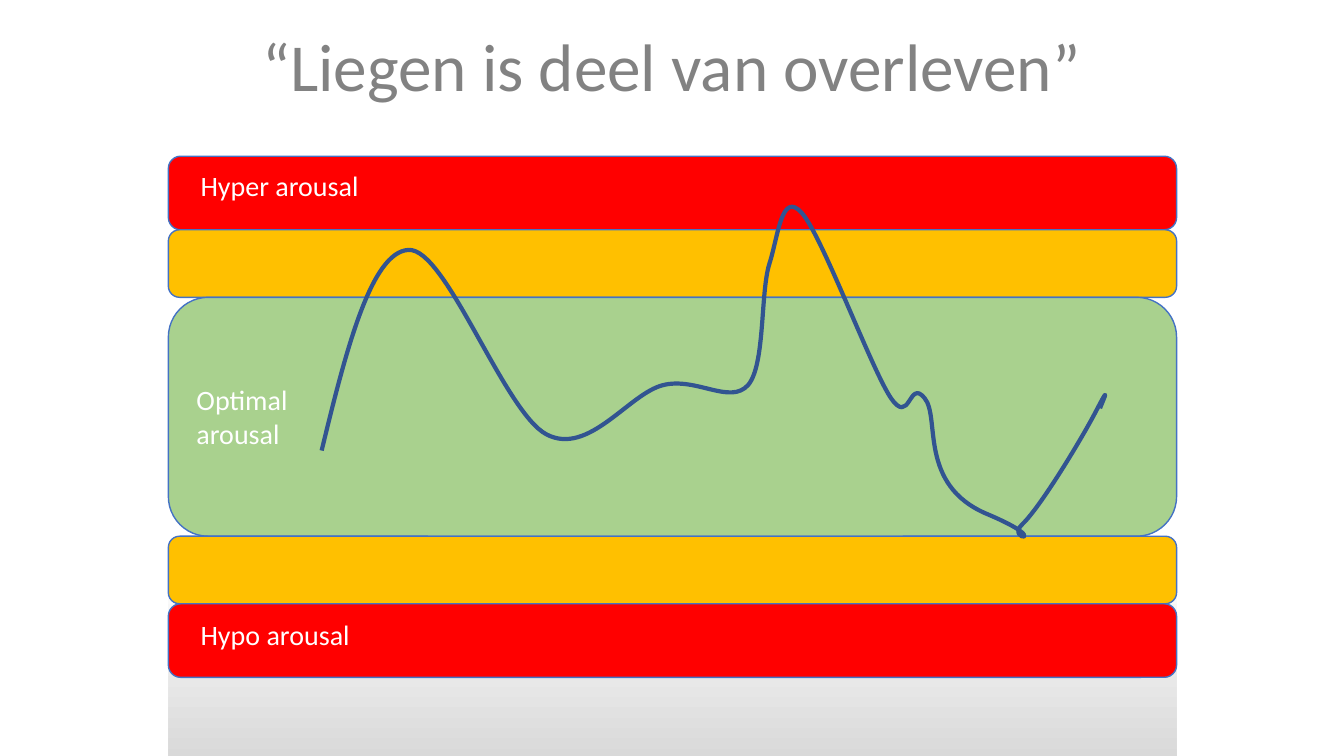
from dataclasses import dataclass

from lxml.etree import SubElement
from pptx import Presentation
from pptx.dml.color import RGBColor
from pptx.enum.shapes import MSO_SHAPE
from pptx.enum.text import MSO_ANCHOR, MSO_AUTO_SIZE, PP_ALIGN
from pptx.oxml.ns import qn
from pptx.shapes.autoshape import Shape
from pptx.slide import Slide
from pptx.util import Inches, Pt


@dataclass(frozen=True)
class Theme:
    font: str = "Calibri"
    title_size: int = 48
    label_size: int = 20
    title: str = "828282"
    label: str = "FFFFFF"
    outline: str = "4472C4"
    curve: str = "325491"
    red: str = "FF0000"
    amber: str = "FFC000"
    green: str = "A9D18E"
    fade: tuple[str, str] = ("FFFFFF", "D9D9D9")


@dataclass(frozen=True)
class Band:
    height: float
    color: str


@dataclass(frozen=True)
class Label:
    text: str
    left: float
    top: float
    width: float
    height: float


THEME = Theme()
BAND_LEFT, BAND_TOP, BAND_WIDTH = 1.67, 1.55, 10

BANDS = [
    Band(0.73, THEME.red),
    Band(0.67, THEME.amber),
    Band(2.37, THEME.green),
    Band(0.67, THEME.amber),
    Band(0.73, THEME.red),
]

LABELS = [
    Label("Optimal arousal", 1.85, 3.75, 1.45, 0.77),
    Label("Hyper arousal", 1.89, 1.62, 1.82, 0.44),
    Label("Hypo arousal", 1.89, 6.08, 1.82, 0.44),
]

# Arousal over time: a start point, then two handles and an end point per segment
CURVE_START = (3.19, 4.47)
CURVE = [
    (3.43, 3.48), (3.68, 2.5), (4.05, 2.48),
    (4.42, 2.45), (5, 4.09), (5.42, 4.31),
    (5.84, 4.53), (6.24, 3.9), (6.58, 3.82),
    (6.91, 3.74), (7.24, 4.02), (7.42, 3.82),
    (7.59, 3.62), (7.54, 2.91), (7.63, 2.62),
    (7.72, 2.34), (7.75, 1.89), (7.95, 2.11),
    (8.15, 2.33), (8.63, 3.63), (8.83, 3.94),
    (9.03, 4.24), (9.01, 3.75), (9.17, 3.95),
    (9.33, 4.14), (9.1, 4.81), (9.79, 5.1),
    (10.48, 5.39), (9.96, 5.37), (10.14, 5.2),
    (10.32, 5.03), (10.73, 4.35), (10.87, 4.08),
    (11.01, 3.81), (10.96, 3.93), (10.91, 4.05),
]


def rgb(color: str) -> RGBColor:
    return RGBColor.from_string(color)


def set_text(sp: Shape, text: str, size: int, color: str) -> None:
    tf = sp.text_frame
    tf.word_wrap = True
    tf.auto_size = MSO_AUTO_SIZE.NONE
    tf.vertical_anchor = MSO_ANCHOR.TOP
    tf.text = text
    font = tf.paragraphs[0].font
    font.name, font.size = THEME.font, Pt(size)
    font.color.rgb = rgb(color)


def add_title(s: Slide, text: str) -> None:
    sp = s.shapes.title
    sp.left, sp.top = Inches(0.79), Inches(0.19)
    sp.width, sp.height = Inches(11.74), Inches(0.91)
    set_text(sp, text, THEME.title_size, THEME.title)
    p = sp.text_frame.paragraphs[0]
    p.alignment = PP_ALIGN.CENTER
    # Hanging indent
    pPr = p._p.get_or_add_pPr()
    pPr.set("marL", str(Inches(0.25)))
    pPr.set("indent", str(Inches(-0.25)))


def add_fade(s: Slide) -> None:
    sp = s.shapes.add_shape(MSO_SHAPE.RECTANGLE, Inches(BAND_LEFT), Inches(5.58),
                            Inches(BAND_WIDTH), Inches(1.95))
    sp.shadow.inherit = False
    sp.line.fill.background()
    sp.fill.gradient()
    sp.fill.gradient_angle = 270
    for stop, color in zip(sp.fill.gradient_stops, THEME.fade):
        stop.color.rgb = rgb(color)


def add_band(s: Slide, band: Band, top: float) -> None:
    sp = s.shapes.add_shape(MSO_SHAPE.ROUNDED_RECTANGLE, Inches(BAND_LEFT), Inches(top),
                            Inches(BAND_WIDTH), Inches(band.height))
    sp.shadow.inherit = False
    sp.fill.solid()
    sp.fill.fore_color.rgb = rgb(band.color)
    sp.line.color.rgb = rgb(THEME.outline)
    sp.line.width = Pt(1)


def add_curve(s: Slide) -> None:
    builder = s.shapes.build_freeform(*map(Inches, CURVE_START))
    builder.add_line_segments([(Inches(x), Inches(y)) for x, y in CURVE], close=False)
    sp = builder.convert_to_shape()
    sp.shadow.inherit = False
    sp.fill.background()
    sp.line.color.rgb = rgb(THEME.curve)
    sp.line.width = Pt(3)
    # Join every three straight segments into one cubic curve
    outline = sp._element.find(".//" + qn("a:path"))
    segments = outline.findall(qn("a:lnTo"))
    for i in range(0, len(segments), 3):
        cubic = SubElement(outline, qn("a:cubicBezTo"))
        for segment in segments[i:i + 3]:
            cubic.append(segment[0])
            outline.remove(segment)


def add_label(s: Slide, label: Label) -> None:
    sp = s.shapes.add_textbox(Inches(label.left), Inches(label.top),
                              Inches(label.width), Inches(label.height))
    set_text(sp, label.text, THEME.label_size, THEME.label)


def main() -> None:
    prs = Presentation()
    prs.slide_width, prs.slide_height = Inches(13.33), Inches(7.5)
    s = prs.slides.add_slide(prs.slide_layouts[5])

    add_title(s, "“Liegen is deel van overleven”")
    add_fade(s)

    # Bands stacked from top to bottom
    top = BAND_TOP
    for band in BANDS:
        add_band(s, band, top)
        top += band.height

    add_curve(s)
    for label in LABELS:
        add_label(s, label)

    prs.save("out.pptx")


if __name__ == "__main__":
    main()
